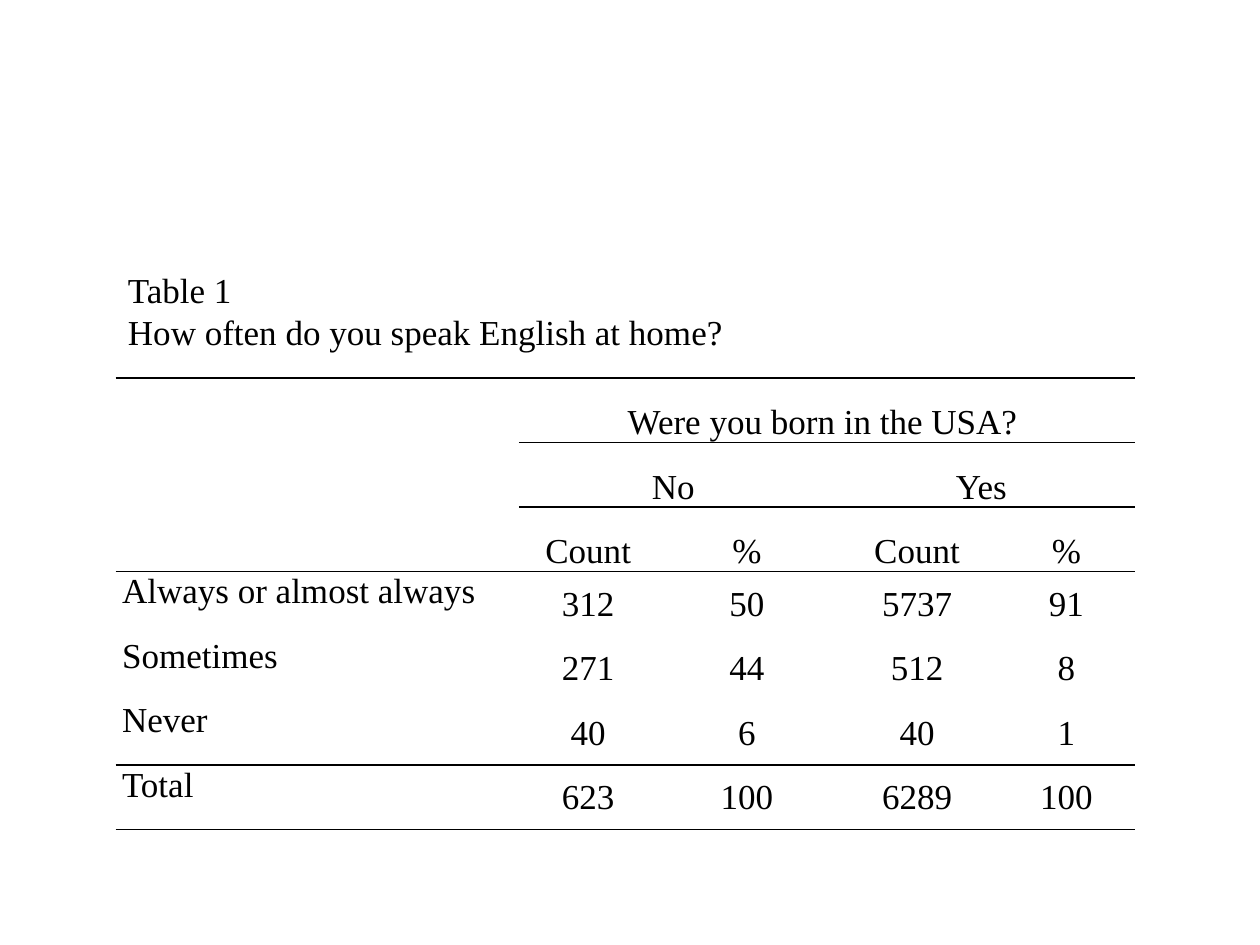
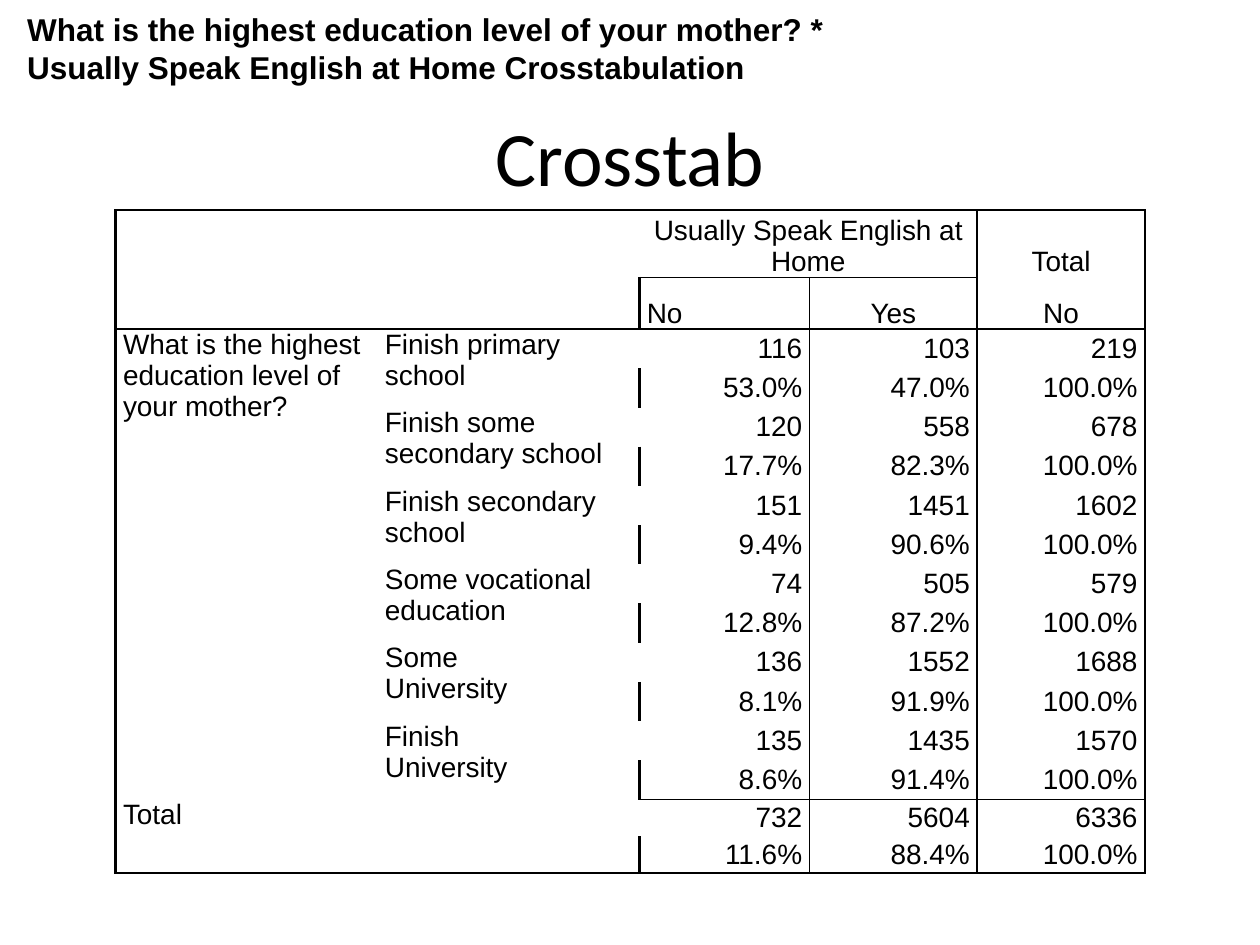
import pptx
import pptx.dml.color
import pptx.enum.text
import pptx.oxml
import pptx.oxml.ns
import pptx.util
from pptx.util import Cm, Pt

INK = pptx.dml.color.RGBColor(0x00, 0x00, 0x00)
PAPER = pptx.dml.color.RGBColor(0xFF, 0xFF, 0xFF)
LEFT, CENTER, RIGHT = (pptx.enum.text.PP_ALIGN.LEFT, pptx.enum.text.PP_ALIGN.CENTER,
                       pptx.enum.text.PP_ALIGN.RIGHT)
TOP, MIDDLE, BOTTOM = (pptx.enum.text.MSO_ANCHOR.TOP, pptx.enum.text.MSO_ANCHOR.MIDDLE,
                       pptx.enum.text.MSO_ANCHOR.BOTTOM)
TABLE_LEFT = 2.33

# Slide 1: language at home by birthplace
CAPTION = "Table 1\nHow often do you speak English at home?"
BIRTHPLACE_HEADERS = [
    ["", "Were you born in the USA?", "", "", ""],
    ["", "No", "", "Yes", ""],
    ["", "Count", "%", "Count", "%"],
]
ANSWERS = [
    ["Always or almost always", 312, 50, 5737, 91],
    ["Sometimes", 271, 44, 512, 8],
    ["Never", 40, 6, 40, 1],
    ["Total", 623, 100, 6289, 100],
]
BIRTHPLACE = {
    "font": ("Times New Roman", 20),
    "top": 7.62,
    "columns": [8.13, 2.97, 3.43, 3.43, 2.59],
    "rows": [1.3] * 7,
    "margins": (0.13, 0.02, 0.13, 0),
    "fill": None,
    # (first row, first column, rows, columns)
    "merges": [(0, 0, 3, 1), (0, 1, 1, 4), (1, 1, 1, 2), (1, 3, 1, 2)],
    # grid line -> (cells it passes, points)
    "across": {0: (range(5), 1), 1: (range(1, 5), 1), 2: (range(1, 5), 1),
               3: (range(5), 1), 6: (range(5), 1), 7: (range(5), 1)},
    "down": {},
}

# Slide 2: language at home by the mother's education
QUESTION = ("What is the highest education level of your mother? * "
            "Usually Speak English at Home Crosstabulation")
TITLE = "Crosstab"
CROSSTAB_HEADERS = [
    ["", "", "Usually Speak English at Home", "", "Total"],
    ["", "", "No", "Yes", "No"],
]
ROW_VARIABLE = "What is the highest education level of your mother?"
EDUCATION = [
    ("Finish primary school", 116, 103),
    ("Finish some secondary school", 120, 558),
    ("Finish secondary school", 151, 1451),
    ("Some vocational education", 74, 505),
    ("Some\nUniversity", 136, 1552),
    ("Finish\nUniversity", 135, 1435),
]
CROSSTAB = {
    "font": ("Arial", 16),
    "top": 4.24,
    "columns": [5.28, 5.28, 3.43, 3.38, 3.38],
    "rows": [1.19, 1.04] + [0.79] * 12 + [0.74] * 2,
    "margins": (0.15, 0, 0.15, 0),
    "fill": PAPER,
    "merges": [(0, 0, 2, 2), (0, 2, 1, 2), (2, 0, 12, 1), (14, 0, 2, 2)]
              + [(row, 1, 2, 1) for row in range(2, 14, 2)],
    "across": {0: (range(5), 1.5), 1: (range(2, 4), 1), 2: (range(5), 1.5),
               14: (range(2, 5), 1), 16: (range(5), 1.5)},
    "down": {0: (range(16), 1.5), 2: (range(1, 16, 2), 1.5), 3: (range(1, 16), 1),
             4: (range(16), 1), 5: (range(16), 1.5)},
}


def birthplace_texts():
    """Headers and figures carry a closing space, which shifts their centring."""
    return [[f"{text} " if column and text != "" else text for column, text in enumerate(row)]
            for row in BIRTHPLACE_HEADERS + ANSWERS]


def birthplace_place(row, column):
    if column == 0:
        return LEFT, TOP
    return CENTER, BOTTOM if row < 3 else MIDDLE


def crosstab_texts():
    """Each level gives a row of counts and a row of shares of its total."""
    rows = list(CROSSTAB_HEADERS)
    totals = ("", sum(no for _, no, _ in EDUCATION), sum(yes for _, _, yes in EDUCATION))
    for index, (level, no, yes) in enumerate(EDUCATION + [totals]):
        heading = {0: ROW_VARIABLE, len(EDUCATION): "Total"}.get(index, "")
        counts = [no, yes, no + yes]
        rows.append([heading, level] + counts)
        rows.append(["", ""] + [f"{count / (no + yes):.1%}" for count in counts])
    return rows


def crosstab_place(row, column):
    if row < 2:
        return LEFT if (row, column) == (1, 2) else CENTER, BOTTOM
    return (LEFT, TOP) if column < 2 else (RIGHT, MIDDLE)


def write(frame, text, font, align=LEFT, bold=False):
    name, size = font
    for index, line in enumerate(str(text).split("\n")):
        paragraph = frame.add_paragraph() if index else frame.paragraphs[0]
        paragraph.alignment = align
        run = paragraph.add_run()
        run.text = line
        run.font.name, run.font.size, run.font.bold = name, Pt(size), bold
        run.font.color.rgb = INK


def add_text(slide, box, text, font, align=LEFT, anchor=TOP, bold=False):
    frame = slide.shapes.add_textbox(*map(Cm, box)).text_frame
    frame.word_wrap = True
    frame.vertical_anchor = anchor
    write(frame, text, font, align, bold)


def set_border(cell, side, points):
    look = f'<a:solidFill><a:srgbClr val="{INK}"/></a:solidFill>' if points else "<a:noFill/>"
    cell._tc.get_or_add_tcPr().append(pptx.oxml.parse_xml(
        f'<a:ln{side} {pptx.oxml.ns.nsdecls("a")} w="{Pt(points)}">{look}</a:ln{side}>'))


def weight(rules, line, position):
    cells, points = rules.get(line, ((), 0))
    return points if position in cells else 0


def add_grid(slide, layout, texts, place):
    columns, rows = layout["columns"], layout["rows"]
    table = slide.shapes.add_table(
        len(rows), len(columns), Cm(TABLE_LEFT), Cm(layout["top"]),
        Cm(sum(columns)), Cm(sum(rows))).table
    table.first_row = table.horz_banding = False
    for column, width in zip(table.columns, columns):
        column.width = Cm(width)
    for row, height in zip(table.rows, rows):
        row.height = Cm(height)
    for row, column, high, wide in layout["merges"]:
        table.cell(row, column).merge(table.cell(row + high - 1, column + wide - 1))

    for r, row in enumerate(texts):
        for c, text in enumerate(row):
            cell = table.cell(r, c)
            high, wide = (cell.span_height, cell.span_width) if cell.is_merge_origin else (1, 1)
            set_border(cell, "L", weight(layout["down"], c, r))
            set_border(cell, "R", weight(layout["down"], c + wide, r))
            set_border(cell, "T", weight(layout["across"], r, c))
            set_border(cell, "B", weight(layout["across"], r + high, c))
            if layout["fill"] is None:
                cell.fill.background()
            else:
                cell.fill.solid()
                cell.fill.fore_color.rgb = layout["fill"]
            (cell.margin_left, cell.margin_top,
             cell.margin_right, cell.margin_bottom) = map(Cm, layout["margins"])
            align, cell.vertical_anchor = place(r, c)
            if text != "":
                write(cell.text_frame, text, layout["font"], align)


def main():
    deck = pptx.Presentation()
    deck.slide_width, deck.slide_height = Cm(25.4), Cm(19.05)
    blank = deck.slide_layouts[6]

    birthplace = deck.slides.add_slide(blank)
    add_text(birthplace, (TABLE_LEFT, 5.29, 14.4, 1.96), CAPTION, BIRTHPLACE["font"])
    add_grid(birthplace, BIRTHPLACE, birthplace_texts(), birthplace_place)

    crosstab = deck.slides.add_slide(blank)
    add_text(crosstab, (1.27, 2.33, 22.86, 1.6), TITLE, ("Calibri", 44), CENTER, MIDDLE)
    add_grid(crosstab, CROSSTAB, crosstab_texts(), crosstab_place)
    add_text(crosstab, (0.3, 0.08, 17.75, 2.57), QUESTION, ("Arial", 18), bold=True)

    deck.save("out.pptx")


if __name__ == "__main__":
    main()
